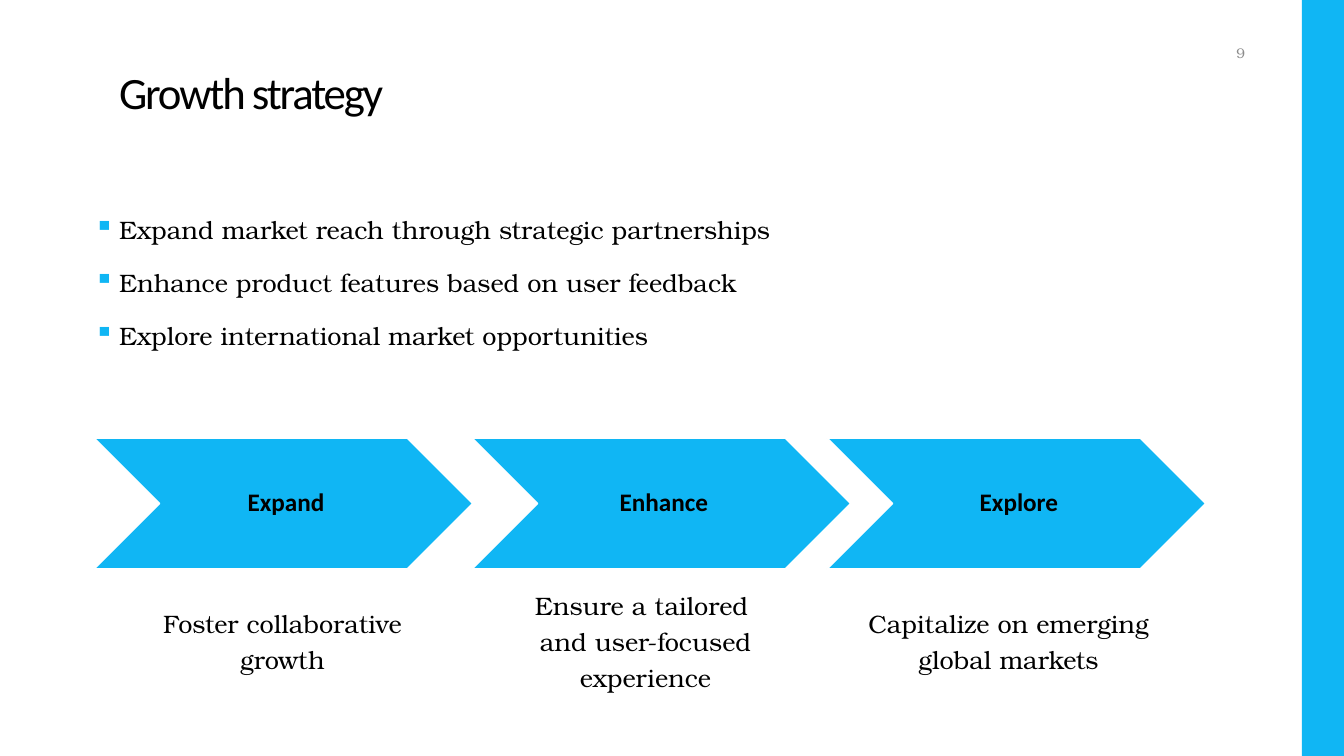
from lxml.etree import SubElement
from pptx import Presentation
from pptx.dml.color import RGBColor
from pptx.enum.shapes import MSO_SHAPE
from pptx.enum.text import MSO_ANCHOR, MSO_AUTO_SIZE, PP_ALIGN
from pptx.oxml.ns import qn
from pptx.util import Emu, Pt

TITLE = "Growth strategy"
GOALS = [
    "Expand market reach through strategic partnerships",
    "Enhance product features based on user feedback",
    "Explore international market opportunities",
]
STEPS = [
    ("Expand", 94, "Foster collaborative growth", 131, 303),
    ("Enhance", 472, "Ensure a tailored \vand user-focused experience", 471, 349),
    ("Explore", 827, "Capitalize on emerging global markets", 857, 303),
]
PAGE = "9"

BLUE = RGBColor(0x10, 0xB6, 0xF4)
WHITE = RGBColor(0xFF, 0xFF, 0xFF)
BLACK = RGBColor(0, 0, 0)
GREY = RGBColor(0x8C, 0x8C, 0x8C)
HEAD, BODY = "Calibri", "TeX Gyre Bonum"
SCALE = 914400 / 100.8


def px(n):
    return Emu(round(n * SCALE))


def frame(shape, pads, anchor):
    text = shape.text_frame
    text.word_wrap = True
    text.auto_size = MSO_AUTO_SIZE.NONE
    text.vertical_anchor = anchor
    text.margin_left, text.margin_top, text.margin_right, text.margin_bottom = map(px, pads)
    return text


def style(para, face, size, color, align, space=1.0, after=0, bold=False):
    para.alignment = align
    para.line_spacing = space
    para.space_before = Pt(0)
    para.space_after = Pt(after)
    for run in para.runs:
        font = run.font
        font.name, font.size, font.bold = face, Pt(size), bold
        font.color.rgb = color


def add_box(slide, box, pads, anchor, text):
    shape = slide.shapes.add_textbox(*map(px, box))
    body = frame(shape, pads, anchor)
    body.text = text
    return body


def add_block(slide, kind, box):
    shape = slide.shapes.add_shape(kind, *map(px, box))
    shape.shadow.inherit = False
    shape.fill.solid()
    shape.fill.fore_color.rgb = BLUE
    shape.line.fill.background()
    return shape


def add_mark(para):
    props = para._p.get_or_add_pPr()
    props.set("marL", str(px(25)))
    props.set("indent", str(-px(25)))
    color = SubElement(props, qn("a:buClr"))
    SubElement(color, qn("a:srgbClr"), val=str(BLUE))
    SubElement(props, qn("a:buSzPct"), val="110000")
    SubElement(props, qn("a:buChar"), char="▪")


def add_title(slide):
    title = slide.shapes.title
    title.left, title.top, title.width, title.height = map(px, (94, 0, 1116, 144))
    text = frame(title, (25, 25, 25, 25), MSO_ANCHOR.BOTTOM)
    text.text = TITLE
    para = text.paragraphs[0]
    style(para, HEAD, 32, BLACK, PP_ALIGN.LEFT, 0.85)
    para.runs[0]._r.get_or_add_rPr().set("spc", "-150")


def add_goals(slide):
    text = add_box(slide, (94, 203, 1112, 157), (0, 5, 10, 5), MSO_ANCHOR.TOP, "\n".join(GOALS))
    for para in text.paragraphs:
        add_mark(para)
        style(para, BODY, 18, BLACK, PP_ALIGN.LEFT, 1.2, 12)


def add_step(slide, name, left, note, start, width):
    arrow = add_block(slide, MSO_SHAPE.CHEVRON, (left, 438, 379, 131))
    arrow.line.color.rgb = WHITE
    arrow.line.width = Pt(1.25)
    text = frame(arrow, (8, 3, 3, 3), MSO_ANCHOR.MIDDLE)
    text.text = name
    style(text.paragraphs[0], HEAD, 18, BLACK, PP_ALIGN.CENTER, 0.9, bold=True)
    text = add_box(slide, (start, 586, width, 105), (0, 0, 0, 0), MSO_ANCHOR.MIDDLE, note)
    style(text.paragraphs[0], BODY, 18, BLACK, PP_ALIGN.CENTER, 1.2, 12)


def main():
    deck = Presentation()
    deck.slide_width, deck.slide_height = px(1344), px(756)
    slide = deck.slides.add_slide(deck.slide_layouts[5])
    add_block(slide, MSO_SHAPE.RECTANGLE, (1302, 0, 42, 756))
    add_title(slide)
    add_goals(slide)
    for step in STEPS:
        add_step(slide, *step)
    text = add_box(slide, (1154, 35, 101, 35), (10, 5, 10, 5), MSO_ANCHOR.MIDDLE, PAGE)
    style(text.paragraphs[0], BODY, 10, GREY, PP_ALIGN.RIGHT)
    deck.save("out.pptx")


if __name__ == "__main__":
    main()
